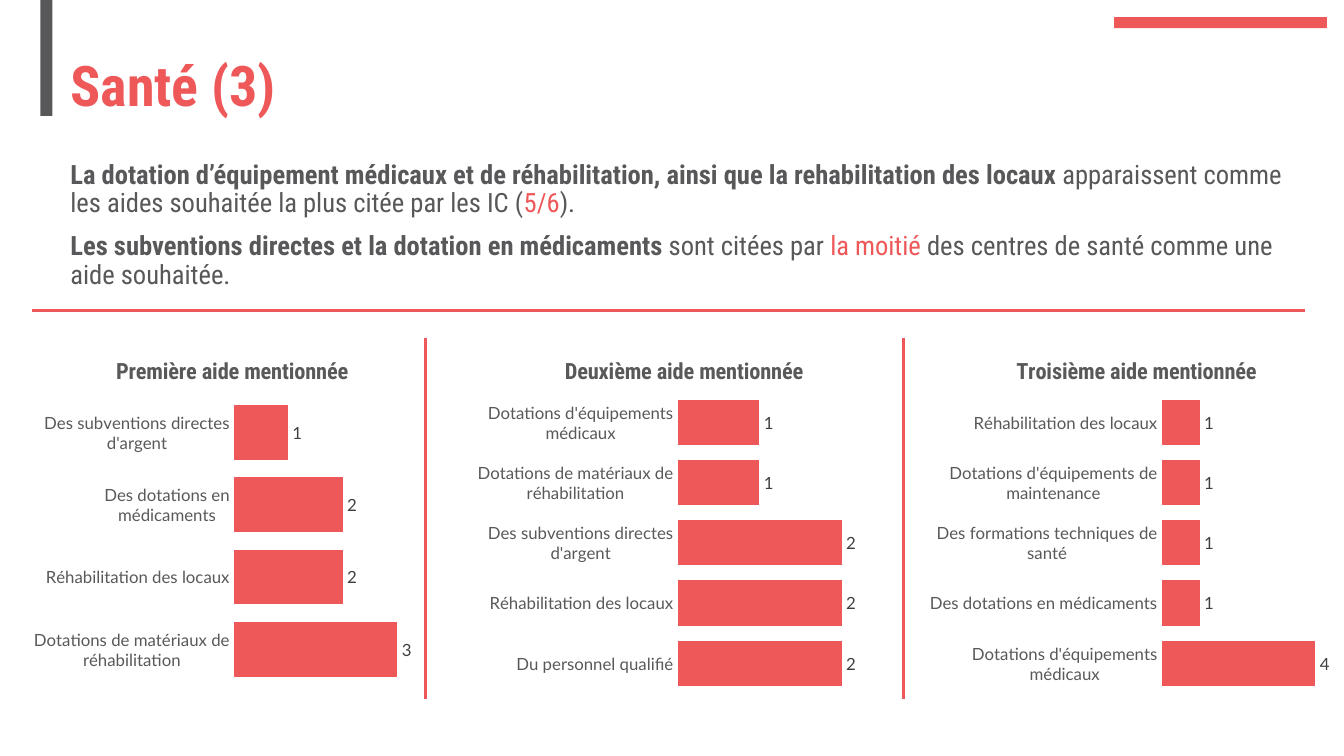
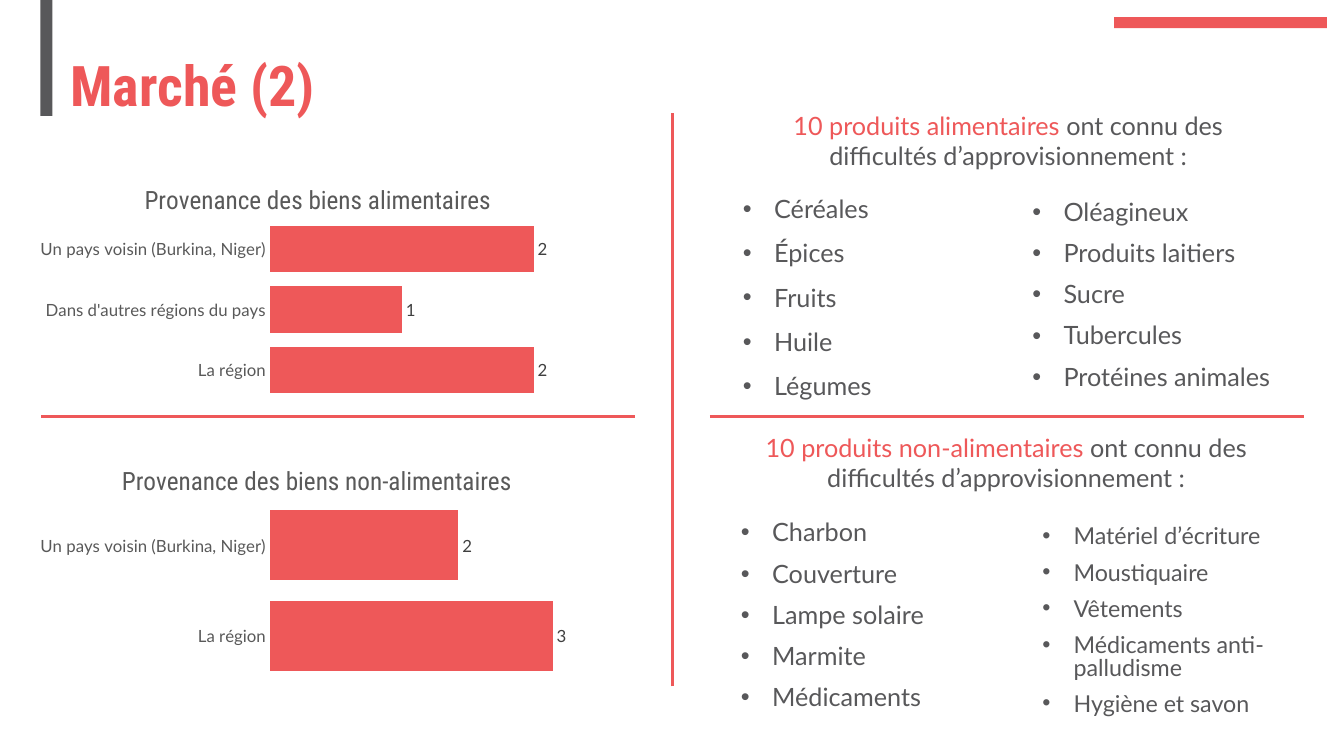
from dataclasses import dataclass
from typing import Any, NamedTuple

from lxml import etree
from pptx import Presentation
from pptx import util as u
from pptx.chart import data as chart_data
from pptx.dml.color import RGBColor
from pptx.enum import chart as chart_enum, shapes, text
from pptx.oxml import parse_xml
from pptx.oxml.ns import nsdecls, qn


@dataclass(frozen=True)
class Theme:
    red: RGBColor = RGBColor(0xEE, 0x58, 0x59)
    grey: RGBColor = RGBColor(0x58, 0x58, 0x5A)
    axis_grey: RGBColor = RGBColor(0x59, 0x59, 0x59)
    label_grey: RGBColor = RGBColor(0x40, 0x40, 0x40)
    white: RGBColor = RGBColor(0xFF, 0xFF, 0xFF)
    heading_font: str = "Roboto Condensed"
    body_font: str = "Lato"
    title_size: float = 40
    intro_size: float = 19
    body_size: float = 18
    small_body_size: float = 16.6
    small_chart_title_size: float = 16
    chart_size: float = 12


THEME = Theme()
TITLE_TOP_IN_CHART = 0.15


class Box(NamedTuple):
    left: float
    top: float
    width: float
    height: float

    def lengths(self) -> tuple:
        return tuple(u.Inches(value) for value in self)


class Run(NamedTuple):
    text: str
    color: RGBColor = THEME.grey
    bold: bool = False


class Rule(NamedTuple):
    x1: float
    y1: float
    x2: float
    y2: float


@dataclass(frozen=True)
class BarChart:
    title: str
    title_left: float
    box: Box
    plot: Box
    bars: dict[str, int]
    title_size: float = THEME.body_size
    bold: bool = False
    border: bool = False


@dataclass(frozen=True)
class TextBlock:
    box: Box
    paragraphs: list[list[Run]]
    font: str = THEME.body_font
    size: float = THEME.body_size
    spacing: float = 1.0
    align: Any = text.PP_ALIGN.LEFT
    bullets: bool = False


def apply_format(target: Any, values: dict[str, Any]) -> None:
    for name, value in values.items():
        setattr(target, name, value)


def format_font(font: Any, name: str, size: float, color: RGBColor, bold: bool = False) -> None:
    apply_format(font, {"name": name, "size": u.Pt(size), "bold": bold})
    font.color.rgb = color


def draw_band(slide: Any, box: Box, color: RGBColor) -> Any:
    band = slide.shapes.add_shape(shapes.MSO_SHAPE.RECTANGLE, *box.lengths())
    band.shadow.inherit = False
    band.fill.solid()
    band.fill.fore_color.rgb = color
    band.line.fill.background()
    return band


def prepare_layout(presentation: Any) -> Any:
    layout = presentation.slide_layouts[5]
    for placeholder in list(layout.placeholders)[1:]:
        layout.shapes.element.remove(placeholder.element)
    return layout


def move_bands_to_layout(slide: Any) -> None:
    bands = [(Box(11.05, 0.17, 2.11, 0.11), THEME.red), (Box(0.4, 0, 0.12, 1.15), THEME.grey)]
    for box, color in bands:
        slide.slide_layout.shapes.element.append(draw_band(slide, box, color).element)


def set_title(slide: Any, title: str, width: float) -> None:
    placeholder = slide.shapes.title
    position = Box(0.6, 0.54, width, 0.67).lengths()
    apply_format(placeholder, dict(zip(("left", "top", "width", "height"), position)))
    frame = placeholder.text_frame
    apply_format(frame, {
        "text": title,
        "word_wrap": True,
        "auto_size": text.MSO_AUTO_SIZE.NONE,
        "vertical_anchor": text.MSO_ANCHOR.MIDDLE,
    })
    paragraph = frame.paragraphs[0]
    apply_format(paragraph, {"alignment": text.PP_ALIGN.LEFT, "line_spacing": 0.9})
    format_font(paragraph.runs[0].font, THEME.heading_font, THEME.title_size, THEME.red, True)


def draw_rule(slide: Any, rule: Rule) -> None:
    ends = [u.Inches(value) for value in rule]
    connector = slide.shapes.add_connector(shapes.MSO_CONNECTOR.STRAIGHT, *ends)
    connector.line.color.rgb = THEME.red
    connector.line.width = u.Pt(2.25)
    etree.SubElement(connector.element.spPr, qn("a:effectLst"))


def add_bullet(paragraph: Any) -> None:
    properties = paragraph._p.get_or_add_pPr()
    indent = u.Inches(0.31)
    properties.set("marL", str(indent))
    properties.set("indent", str(-indent))
    etree.SubElement(properties, qn("a:buFont")).set("typeface", "Arial")
    etree.SubElement(properties, qn("a:buChar")).set("char", "•")


def draw_text(slide: Any, block: TextBlock) -> None:
    frame = slide.shapes.add_textbox(*block.box.lengths()).text_frame
    frame.word_wrap = True
    for index, runs in enumerate(block.paragraphs):
        paragraph = frame.add_paragraph() if index else frame.paragraphs[0]
        if block.bullets:
            add_bullet(paragraph)
        apply_format(paragraph, {
            "alignment": block.align,
            "line_spacing": block.spacing,
            "space_before": u.Pt(10 if index else 0),
        })
        for item in runs:
            run = paragraph.add_run()
            run.text = item.text
            format_font(run.font, block.font, block.size, item.color, item.bold)


def set_layout(parent: Any, index: int, values: dict[str, Any]) -> None:
    for layout in parent.xpath("c:layout"):
        parent.remove(layout)
    items = "".join(f'<c:{name} val="{value}"/>' for name, value in values.items())
    parent.insert(index, parse_xml(
        f'<c:layout {nsdecls("c")}><c:manualLayout>{items}</c:manualLayout></c:layout>'))


def place_chart_parts(chart: Any, item: BarChart) -> None:
    box, plot = item.box, item.plot
    edges = {"xMode": "edge", "yMode": "edge"}
    set_layout(chart.element.xpath("c:chart/c:title")[0], 1, edges | {
        "x": round((item.title_left - box.left) / box.width, 3),
        "y": round(TITLE_TOP_IN_CHART / box.height, 3),
    })
    set_layout(chart.element.xpath("c:chart/c:plotArea")[0], 0, {"layoutTarget": "inner"} | edges | {
        "x": round((plot.left - box.left) / box.width, 3),
        "y": round((plot.top - box.top) / box.height, 3),
        "w": round(plot.width / box.width, 3),
        "h": round(plot.height / box.height, 3),
    })


def draw_chart(slide: Any, item: BarChart) -> None:
    source = chart_data.CategoryChartData()
    source.categories = list(item.bars)
    source.add_series("Series 1", list(item.bars.values()))
    chart = slide.shapes.add_chart(
        chart_enum.XL_CHART_TYPE.BAR_CLUSTERED, *item.box.lengths(), source).chart
    chart.has_legend = False
    format_font(chart.font, THEME.body_font, THEME.chart_size, THEME.axis_grey)
    chart.has_title = True
    title_frame = chart.chart_title.text_frame
    title_frame.text = item.title
    format_font(title_frame.paragraphs[0].runs[0].font, THEME.heading_font,
                item.title_size, THEME.axis_grey, item.bold)
    place_chart_parts(chart, item)

    apply_format(chart.value_axis, {
        "visible": False,
        "has_major_gridlines": False,
        "minimum_scale": 0,
        "maximum_scale": max(item.bars.values()) + 0.5,
    })
    category_axis = chart.category_axis
    no_tick = chart_enum.XL_TICK_MARK.NONE
    apply_format(category_axis, {"major_tick_mark": no_tick, "minor_tick_mark": no_tick})
    category_axis.format.line.fill.background()
    format_font(category_axis.tick_labels.font, THEME.body_font, THEME.chart_size, THEME.axis_grey)

    plot = chart.plots[0]
    apply_format(plot, {"gap_width": 30, "vary_by_categories": False, "has_data_labels": True})
    apply_format(plot.data_labels, {
        "show_value": True,
        "position": chart_enum.XL_LABEL_POSITION.OUTSIDE_END,
    })
    format_font(plot.data_labels.font, THEME.body_font, THEME.chart_size, THEME.label_grey)
    bar_format = plot.series[0].format
    bar_format.fill.solid()
    bar_format.fill.fore_color.rgb = THEME.red
    if item.border:
        bar_format.line.color.rgb = THEME.white
        bar_format.line.width = u.Pt(0.75)


def build_health(slide: Any) -> None:
    set_title(slide, "Santé (3)", 4.87)
    columns = [
        ("Première aide mentionnée", 1.11, 0.16, Box(2.32, 3.93, 1.9, 2.87),
         {"Dotations de matériaux de réhabilitation": 3, "Réhabilitation des locaux": 2,
          "Des dotations en médicaments": 2, "Des subventions directes d'argent": 1}),
        ("Deuxième aide mentionnée", 5.56, 4.64, Box(6.72, 3.89, 2.04, 2.99),
         {"Du personnel qualifié": 2, "Réhabilitation des locaux": 2,
          "Des subventions directes d'argent": 2, "Dotations de matériaux de réhabilitation": 1,
          "Dotations d'équipements médicaux": 1}),
        ("Troisième aide mentionnée", 10.04, 9.13, Box(11.52, 3.89, 1.72, 2.99),
         {"Dotations d'équipements médicaux": 4, "Des dotations en médicaments": 1,
          "Des formations techniques de santé": 1, "Dotations d'équipements de maintenance": 1,
          "Réhabilitation des locaux": 1}),
    ]
    for title, title_left, left, plot, bars in columns:
        draw_chart(slide, BarChart(title, title_left, Box(left, 3.35, 4.21, 3.61), plot, bars,
                                   THEME.small_chart_title_size, bold=True, border=True))
    draw_text(slide, TextBlock(Box(0.6, 1.55, 12.25, 1.44), [
        [Run("La dotation d’équipement médicaux et de réhabilitation, ainsi que la "
             "rehabilitation des locaux ", bold=True),
         Run("apparaissent comme les aides souhaitée la plus citée par les IC ("),
         Run("5/6", THEME.red), Run(").")],
        [Run("Les subventions directes et la dotation en médicaments ", bold=True),
         Run("sont citées par "), Run("la moitié ", THEME.red),
         Run("des centres de santé comme une aide souhaitée.")],
    ], THEME.heading_font, THEME.intro_size, 0.9))
    for rule in (Rule(4.22, 3.35, 4.22, 6.93), Rule(8.96, 3.35, 8.96, 6.93),
                 Rule(0.32, 3.08, 12.94, 3.08)):
        draw_rule(slide, rule)


def build_market(slide: Any) -> None:
    set_title(slide, "Marché (2)", 9.13)
    for rule in (Rule(6.67, 6.81, 6.67, 1.12), Rule(0.41, 4.13, 6.3, 4.13),
                 Rule(7.04, 4.13, 12.93, 4.13)):
        draw_rule(slide, rule)
    origins = [
        ("Provenance des biens alimentaires", 1.39, 1.62, 2.17,
         {"La région": 2, "Dans d'autres régions du pays": 1, "Un pays voisin (Burkina, Niger)": 2}),
        ("Provenance des biens non-alimentaires", 1.16, 4.41, 4.96,
         {"La région": 3, "Un pays voisin (Burkina, Niger)": 2}),
    ]
    for title, title_left, top, plot_top, bars in origins:
        draw_chart(slide, BarChart(title, title_left, Box(0.29, top, 5.78, 2.4),
                                   Box(2.68, plot_top, 3.27, 1.8), bars))
    headings = [("10 produits alimentaires ", Box(7.27, 1.04, 5.46, 0.85)),
                ("10 produits non-alimentaires ", Box(7.25, 4.24, 5.46, 0.83))]
    for lead, box in headings:
        draw_text(slide, TextBlock(box, [[
            Run(lead, THEME.red), Run("ont connu des difficultés d’approvisionnement :"),
        ]], align=text.PP_ALIGN.CENTER))
    product_lists = [
        (Box(7.27, 1.87, 2.59, 2.22), THEME.body_size, 1.0,
         ["Céréales", "Épices", "Fruits", "Huile", "Légumes"]),
        (Box(10.14, 1.93, 2.59, 2.08), THEME.body_size, 0.9,
         ["Oléagineux", "Produits laitiers", "Sucre", "Tubercules", "Protéines animales"]),
        (Box(7.25, 5.11, 2.59, 2.14), THEME.body_size, 0.9,
         ["Charbon", "Couverture", "Lampe solaire", "Marmite", "Médicaments"]),
        (Box(10.24, 5.18, 2.81, 2.14), THEME.small_body_size, 0.8,
         ["Matériel d’écriture", "Moustiquaire", "Vêtements", "Médicaments anti-palludisme",
          "Hygiène et savon"]),
    ]
    for box, size, spacing, products in product_lists:
        draw_text(slide, TextBlock(box, [[Run(product)] for product in products],
                                   size=size, spacing=spacing, bullets=True))


def main() -> None:
    presentation = Presentation()
    presentation.slide_width, presentation.slide_height = u.Inches(13.33), u.Inches(7.5)
    layout = prepare_layout(presentation)
    slides = [presentation.slides.add_slide(layout) for _ in range(2)]
    move_bands_to_layout(slides[0])
    for build, slide in zip((build_health, build_market), slides):
        build(slide)
    presentation.save("out.pptx")


if __name__ == "__main__":
    main()
